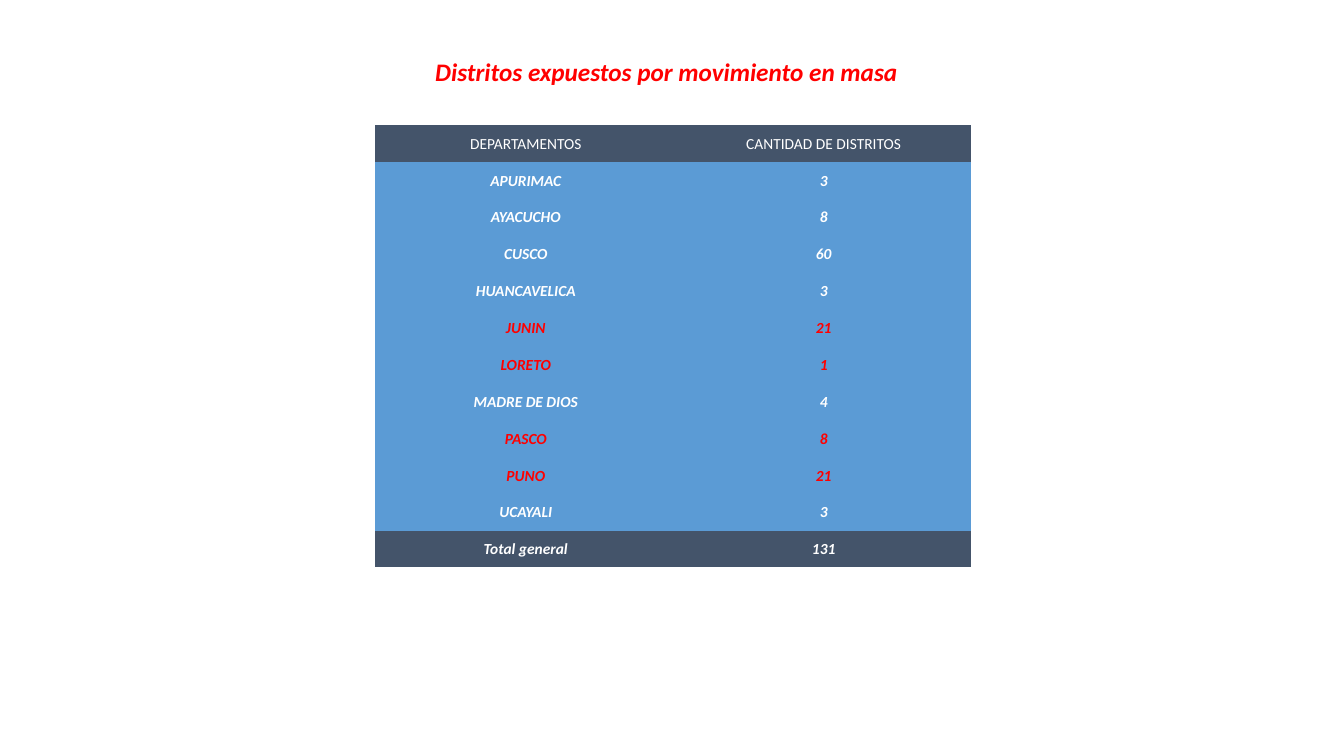
"""Build the slide on districts exposed to mass movement."""
from dataclasses import dataclass

import pptx
import pptx.dml.color
import pptx.enum.text
import pptx.oxml.ns
import pptx.slide
import pptx.text.text
import pptx.util
from pptx.util import Inches


@dataclass(frozen=True)
class Theme:
    font: str = "Calibri"
    title_size: int = 18
    table_size: int = 11
    white: str = "FFFFFF"
    red: str = "FF0000"
    slate: str = "44546A"
    blue: str = "5B9BD5"
    plain_table_style: str = "{2D5ABB26-0587-4C30-8999-92F81FD0307C}"


THEME = Theme()


@dataclass(frozen=True)
class DistrictRow:
    department: str
    districts: str
    fill: str = THEME.blue
    color: str = THEME.white
    emphasis: bool = True


ROWS = [
    DistrictRow("DEPARTAMENTOS", "CANTIDAD DE DISTRITOS", fill=THEME.slate, emphasis=False),
    DistrictRow("APURIMAC", "3"),
    DistrictRow("AYACUCHO", "8"),
    DistrictRow("CUSCO", "60"),
    DistrictRow("HUANCAVELICA", "3"),
    DistrictRow("JUNIN", "21", color=THEME.red),
    DistrictRow("LORETO", "1", color=THEME.red),
    DistrictRow("MADRE DE DIOS", "4"),
    DistrictRow("PASCO", "8", color=THEME.red),
    DistrictRow("PUNO", "21", color=THEME.red),
    DistrictRow("UCAYALI", "3"),
    DistrictRow("Total general", "131", fill=THEME.slate),
]
COLUMN_WIDTHS = (2.99, 2.92)
TABLE_HEIGHT = 4.39


def write_text(frame: pptx.text.text.TextFrame, text: str, *, size: int,
               color: str, emphasis: bool = True) -> None:
    paragraph = frame.paragraphs[0]
    paragraph.alignment = pptx.enum.text.PP_ALIGN.CENTER
    run = paragraph.add_run()
    run.text = text
    run.font.name = THEME.font
    run.font.size = pptx.util.Pt(size)
    run.font.bold = run.font.italic = emphasis
    run.font.color.rgb = pptx.dml.color.RGBColor.from_string(color)


def add_title(slide: pptx.slide.Slide) -> None:
    title = slide.shapes.title
    title.left, title.top = Inches(4.22), Inches(0.51)
    title.width, title.height = Inches(4.9), Inches(0.4)
    frame = title.text_frame
    frame.word_wrap = False
    frame.auto_size = pptx.enum.text.MSO_AUTO_SIZE.NONE
    frame.vertical_anchor = pptx.enum.text.MSO_ANCHOR.TOP
    frame.margin_left, frame.margin_right = 0, Inches(0.12)
    write_text(frame, "Distritos expuestos por movimiento en masa",
               size=THEME.title_size, color=THEME.red)


def add_district_table(slide: pptx.slide.Slide) -> None:
    districts = slide.shapes.add_table(
        len(ROWS), len(COLUMN_WIDTHS), Inches(3.72), Inches(1.24),
        Inches(sum(COLUMN_WIDTHS)), Inches(TABLE_HEIGHT)).table
    districts.horz_banding = False
    style_id = districts._tbl.tblPr.find(pptx.oxml.ns.qn("a:tableStyleId"))
    style_id.text = THEME.plain_table_style
    for column, width in zip(districts.columns, COLUMN_WIDTHS):
        column.width = Inches(width)
    for table_row, row in zip(districts.rows, ROWS):
        table_row.height = Inches(TABLE_HEIGHT / len(ROWS))
        for cell, text in zip(table_row.cells, (row.department, row.districts)):
            cell.fill.solid()
            cell.fill.fore_color.rgb = pptx.dml.color.RGBColor.from_string(row.fill)
            cell.vertical_anchor = pptx.enum.text.MSO_ANCHOR.MIDDLE
            cell.margin_left = cell.margin_right = cell.margin_top = Inches(0.01)
            cell.margin_bottom = 0
            write_text(cell.text_frame, text, size=THEME.table_size,
                       color=row.color, emphasis=row.emphasis)


def main() -> None:
    presentation = pptx.Presentation()
    presentation.slide_width, presentation.slide_height = Inches(13.33), Inches(7.5)
    slide = presentation.slides.add_slide(presentation.slide_layouts[5])
    add_title(slide)
    add_district_table(slide)
    presentation.save("out.pptx")


if __name__ == "__main__":
    main()
